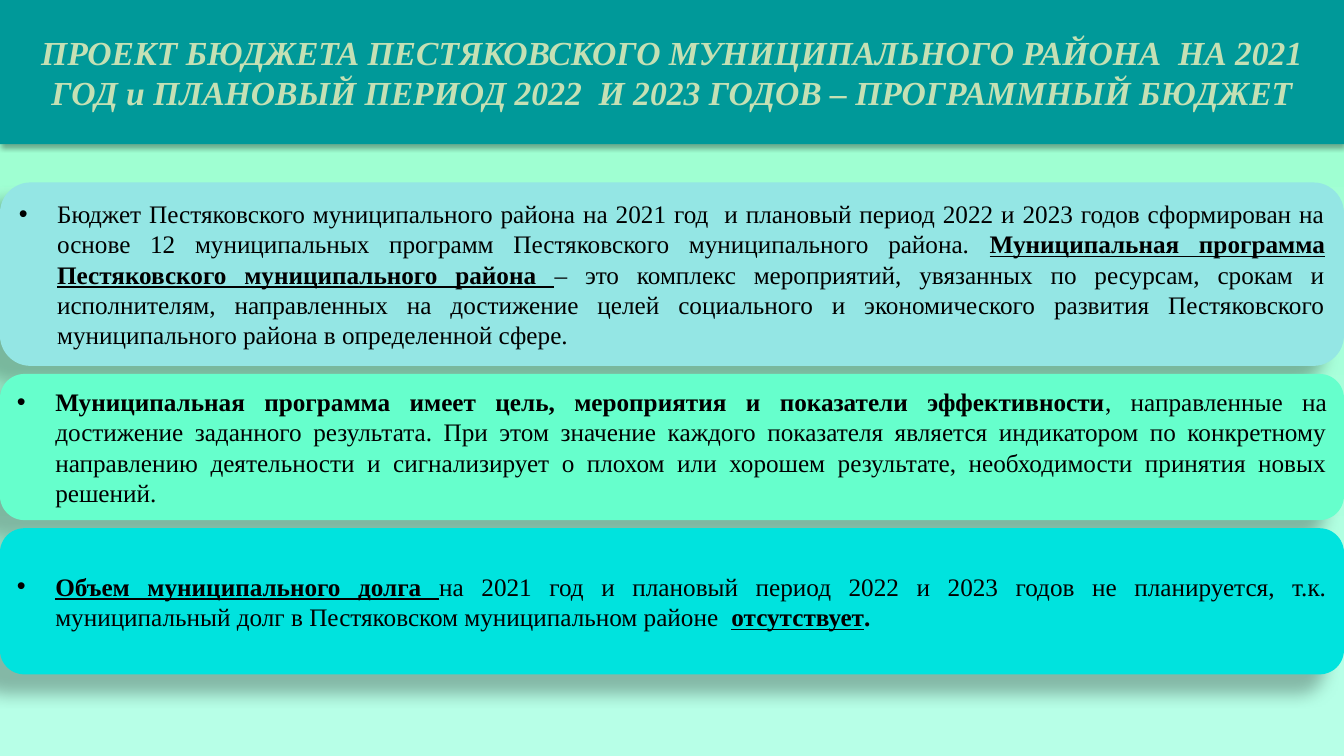
"""Builds the slide on the programme budget of the Pestyaki district."""
from dataclasses import dataclass

from lxml import etree
from pptx import Presentation
from pptx.dml.color import RGBColor
from pptx.enum.shapes import MSO_SHAPE
from pptx.enum.text import MSO_ANCHOR, MSO_AUTO_SIZE, PP_ALIGN
from pptx.oxml.ns import qn
from pptx.shapes.autoshape import Shape
from pptx.slide import Slide
from pptx.text.text import _Paragraph
from pptx.util import Inches, Pt

ROUNDED = MSO_SHAPE.ROUNDED_RECTANGLE
MIDDLE = MSO_ANCHOR.MIDDLE
NO_AUTOFIT = MSO_AUTO_SIZE.NONE
CENTER, JUSTIFY = PP_ALIGN.CENTER, PP_ALIGN.JUSTIFY
TITLE_ONLY = 5
SLIDE_WIDTH, SLIDE_HEIGHT = 13.33, 7.5
BULLET_INDENT = 0.38


@dataclass(frozen=True)
class Shadow:
    """Outer shadow: opacity in percent, lengths in points, angle in degrees."""
    opacity: int
    blur: float
    distance: float
    angle: int


@dataclass(frozen=True)
class Theme:
    """Colours, type and shadows of the slide."""
    font: str = "Times New Roman"
    title_size: int = 24
    body_size: int = 18
    title_text: str = "C5E0B4"
    body_text: str = "000000"
    banner: str = "009999"
    background_top: str = "99FFCC"
    background_bottom: str = "B7FFE7"
    shadow_color: str = "000000"
    banner_shadow: Shadow = Shadow(32, 3.5, 2.2, 90)
    panel_shadow: Shadow = Shadow(28, 11.8, 19.7, 141)


@dataclass(frozen=True)
class Phrase:
    """A stretch of text with its emphasis."""
    text: str
    bold: bool = False
    underline: bool = False


@dataclass(frozen=True)
class Panel:
    """A rounded panel with one bulleted statement."""
    top: float
    height: float
    fill: str
    phrases: tuple[Phrase, ...]


THEME = Theme()
TITLE = ("ПРОЕКТ БЮДЖЕТА ПЕСТЯКОВСКОГО МУНИЦИПАЛЬНОГО РАЙОНА  НА 2021 "
         "ГОД и ПЛАНОВЫЙ ПЕРИОД 2022  И 2023 ГОДОВ – ПРОГРАММНЫЙ БЮДЖЕТ")
PANELS = (
    Panel(1.81, 1.82, "94E6E4", (
        Phrase("Бюджет Пестяковского муниципального района на 2021 год  и плановый период "
               "2022 и 2023 годов сформирован на основе 12 муниципальных программ "
               "Пестяковского муниципального района. "),
        Phrase("Муниципальная программа Пестяковского муниципального района ", True, True),
        Phrase("– это комплекс мероприятий, увязанных по ресурсам, срокам и исполнителям, "
               "направленных на достижение целей социального и экономического развития "
               "Пестяковского муниципального района в определенной сфере."),
    )),
    Panel(3.71, 1.45, "66FFCC", (
        Phrase("Муниципальная программа имеет цель, мероприятия и показатели эффективности", True),
        Phrase(", направленные на достижение заданного результата. При этом значение каждого "
               "показателя является индикатором по конкретному направлению деятельности и "
               "сигнализирует о плохом или хорошем результате, необходимости принятия новых "
               "решений."),
    )),
    Panel(5.24, 1.45, "00E3DE", (
        Phrase("Объем муниципального долга ", True, True),
        Phrase("на 2021 год и плановый период 2022 и 2023 годов не планируется, т.к. "
               "муниципальный долг в Пестяковском муниципальном районе  "),
        Phrase("отсутствует", True, True),
        Phrase(".", True),
    )),
)


def add_text(paragraph: _Paragraph, text: str, *, size: int, color: str, bold: bool = False,
             italic: bool = False, underline: bool = False) -> None:
    """Append a formatted run to a paragraph."""
    run = paragraph.add_run()
    run.text = text
    font = run.font
    font.name, font.size = THEME.font, Pt(size)
    font.bold, font.italic, font.underline = bold, italic, underline
    font.color.rgb = RGBColor.from_string(color)


def add_bullet(paragraph: _Paragraph) -> None:
    """Give a paragraph a hanging round bullet."""
    properties = paragraph._p.get_or_add_pPr()
    properties.set("marL", str(Inches(BULLET_INDENT)))
    properties.set("indent", str(-Inches(BULLET_INDENT)))
    etree.SubElement(properties, qn("a:buFont"), typeface="Arial")
    etree.SubElement(properties, qn("a:buChar"), char="•")


def style_box(box: Shape, fill: str, shadow: Shadow) -> None:
    """Set the fill, shadow and text frame of a box."""
    box.fill.solid()
    box.fill.fore_color.rgb = RGBColor.from_string(fill)
    box.line.fill.background()
    box.shadow.inherit = False
    effects = box.element.spPr.find(qn("a:effectLst"))
    outer = etree.SubElement(
        effects, qn("a:outerShdw"), blurRad=str(Pt(shadow.blur)), dist=str(Pt(shadow.distance)),
        dir=str(shadow.angle * 60000), algn="ctr", rotWithShape="0")
    color = etree.SubElement(outer, qn("a:srgbClr"), val=THEME.shadow_color)
    etree.SubElement(color, qn("a:alpha"), val=str(shadow.opacity * 1000))
    frame = box.text_frame
    frame.word_wrap = True
    frame.auto_size = NO_AUTOFIT
    frame.vertical_anchor = MIDDLE


def paint_background(slide: Slide) -> None:
    """Fill the slide with a vertical gradient."""
    fill = slide.background.fill
    fill.gradient()
    fill.gradient_angle = 270
    stops = ((0, THEME.background_top), (0.93, THEME.background_bottom))
    for stop, (position, color) in zip(fill.gradient_stops, stops):
        stop.position = position
        stop.color.rgb = RGBColor.from_string(color)


def draw_title(slide: Slide) -> None:
    """Turn the title placeholder into the top banner."""
    banner = slide.shapes.title
    banner.left, banner.top = Inches(0), Inches(0)
    banner.width, banner.height = Inches(SLIDE_WIDTH), Inches(1.43)
    style_box(banner, THEME.banner, THEME.banner_shadow)
    heading = banner.text_frame.paragraphs[0]
    heading.alignment = CENTER
    add_text(heading, TITLE, size=THEME.title_size, color=THEME.title_text, bold=True, italic=True)


def draw_panel(slide: Slide, panel: Panel) -> None:
    """Draw a full-width panel with its statement."""
    box = slide.shapes.add_shape(ROUNDED, Inches(0), Inches(panel.top),
                                 Inches(SLIDE_WIDTH), Inches(panel.height))
    style_box(box, panel.fill, THEME.panel_shadow)
    statement = box.text_frame.paragraphs[0]
    add_bullet(statement)
    statement.alignment = JUSTIFY
    for phrase in panel.phrases:
        add_text(statement, phrase.text, size=THEME.body_size, color=THEME.body_text,
                 bold=phrase.bold, underline=phrase.underline)


def main() -> None:
    """Build and save the presentation."""
    presentation = Presentation()
    presentation.slide_width = Inches(SLIDE_WIDTH)
    presentation.slide_height = Inches(SLIDE_HEIGHT)
    slide = presentation.slides.add_slide(presentation.slide_layouts[TITLE_ONLY])
    paint_background(slide)
    draw_title(slide)
    for panel in PANELS:
        draw_panel(slide, panel)
    presentation.save("out.pptx")


if __name__ == "__main__":
    main()
